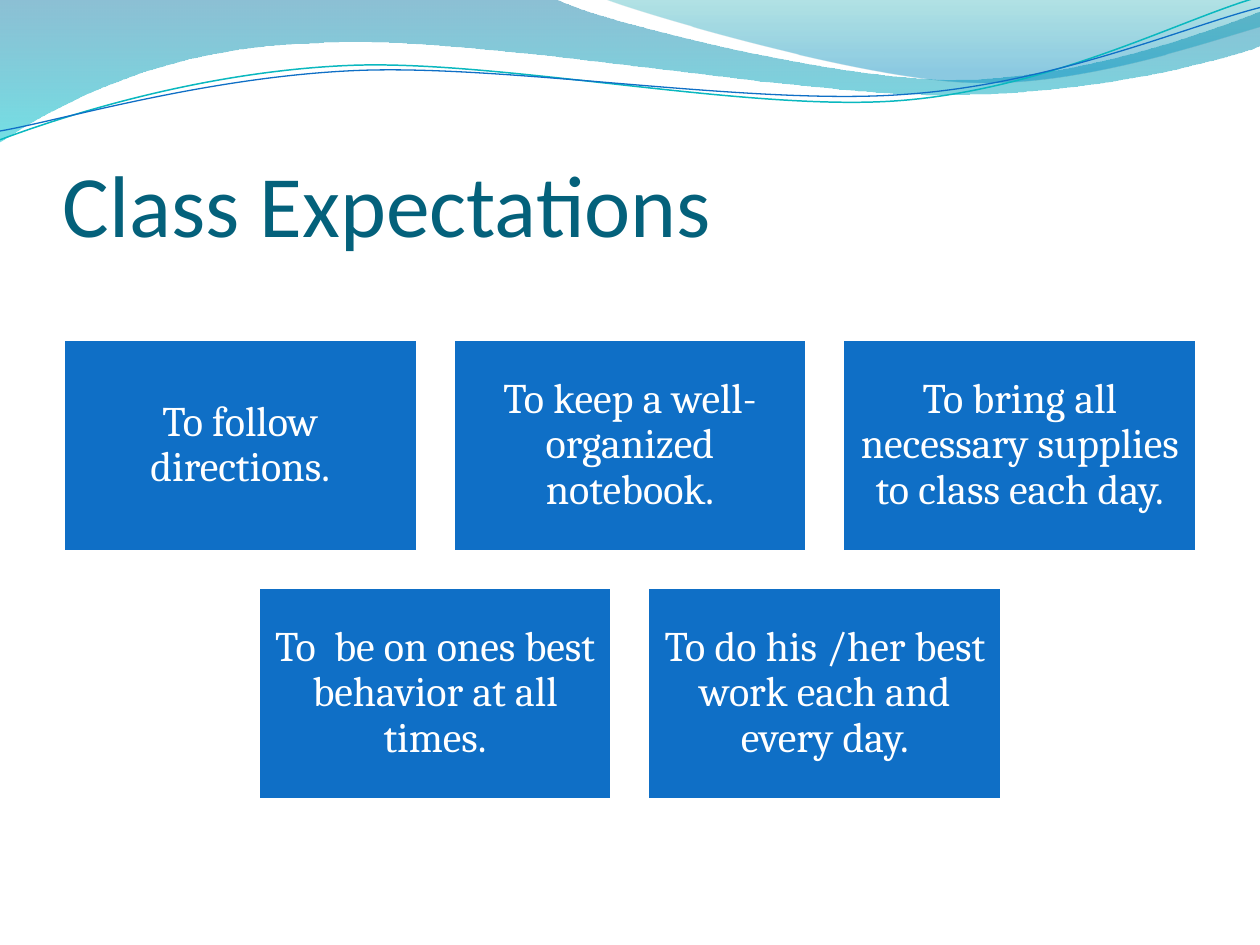
"""Builds the Class Expectations slide: a wave banner, a title and five cards."""
import pptx
import pptx.util
import pptx.dml.color
import pptx.enum.shapes
import pptx.enum.text
import pptx.oxml
import pptx.oxml.ns

RGB = pptx.dml.color.RGBColor
Inches, Pt = pptx.util.Inches, pptx.util.Pt
qn, NS = pptx.oxml.ns.qn, pptx.oxml.ns.nsdecls("a")
WHITE, BLUE, TEAL = RGB(255, 255, 255), RGB(0x0F, 0x6F, 0xC6), RGB(0x0A, 0xB8, 0xBF)
TITLE_COLOR = RGB(0x04, 0x61, 0x7B)
DEEP, AQUA = RGB(0x00, 0x74, 0xA1), RGB(0x00, 0xC6, 0xCF)
SEA, SKY = RGB(0x00, 0xA1, 0xA9), RGB(0x00, 0x8B, 0xBF)

TITLE = "Class Expectations"
CARD_ROWS = [
    ["To follow directions.",
     "To keep a well-organized notebook.",
     "To bring all necessary supplies to class each day."],
    ["To  be on ones best behavior at all times.",
     "To do his /her best work each and every day."],
]

# Each wave is a start point, then segments of one point (line) or three (Bezier curve).
BANDS = [
    ([[(0, 0)], [(4.4, -0.01)],
      [(4.76, 0.17), (6.64, 0.63), (7.58, 0.63)],
      [(8.53, 0.63), (9.58, 0.26), (10, 0.09)], [(10.01, 0.36)],
      [(9.83, 0.44), (8.7, 0.76), (7.46, 0.75)],
      [(6.22, 0.75), (3.82, 0.28), (2.57, 0.34)],
      [(1.29, 0.36), (0.46, 0.83), (-0.01, 1.13)]],
     [(0, DEEP, 45), (1, AQUA, 55)]),
    ([[(4.79, -0.01)],
      [(5.09, 0.11), (6.82, 0.62), (7.69, 0.65)],
      [(8.56, 0.69), (9.61, 0.32), (10, 0.21)], [(10, 0)]],
     [(0, SEA, 30), (0.8, SKY, 45)]),
]
STRANDS = [
    ([[(0, 1.11)],
      [(0.48, 0.93), (1.58, 0.57), (2.77, 0.52)],
      [(3.95, 0.47), (5.93, 0.89), (7.13, 0.8)],
      [(8.33, 0.71), (9.38, 0.15), (9.98, -0.02)]], TEAL, 0.85),
    ([[(0, 1.04)],
      [(0.47, 0.96), (1.64, 0.61), (2.83, 0.56)],
      [(4.03, 0.51), (5.97, 0.84), (7.17, 0.75)],
      [(8.36, 0.67), (9.41, 0.21), (10, 0.06)]], BLUE, 0.75),
]


def add_wave(shapes, segments, close):
    start, *rest = [(Inches(x), Inches(y)) for seg in segments for x, y in seg]
    builder = shapes.build_freeform(*start)
    builder.add_line_segments(rest, close=close)
    sp = builder.convert_to_shape()
    sp.shadow.inherit = False
    lines = iter(list(sp._element.iter(qn("a:lnTo"))))
    for seg in segments[1:]:
        first, *others = [next(lines) for _ in seg]
        if others:
            curve = pptx.oxml.parse_xml(f"<a:cubicBezTo {NS}/>")
            first.addprevious(curve)
            for line in (first, *others):
                curve.append(line[0])
                line.getparent().remove(line)
    return sp


def add_band(shapes, segments, stops):
    sp = add_wave(shapes, segments, True)
    sp.line.fill.background()
    sp.fill.gradient()
    sp.fill.gradient_angle = 270
    for stop, (position, color, _) in zip(sp.fill.gradient_stops, stops):
        stop.position = position
        stop.color.rgb = color
    for clr, (_, _, opacity) in zip(sp._element.spPr.iter(qn("a:srgbClr")), stops):
        clr.append(pptx.oxml.parse_xml(f'<a:alpha {NS} val="{opacity * 1000}"/>'))


def add_strand(shapes, segments, color, width):
    sp = add_wave(shapes, segments, False)
    sp.fill.background()
    sp.line.color.rgb = color
    sp.line.width = Pt(width)


def write(sp, text, font, size, color, anchor, margins):
    tf = sp.text_frame
    tf.word_wrap = True
    tf.vertical_anchor = anchor
    tf.margin_left, tf.margin_top, tf.margin_right, tf.margin_bottom = map(Inches, margins)
    p = tf.paragraphs[0]
    p.text = text
    p.font.name, p.font.size, p.font.color.rgb = font, Pt(size), color
    return p


def add_card(shapes, text, left, top, width, height):
    sp = shapes.add_shape(pptx.enum.shapes.MSO_SHAPE.RECTANGLE,
                          *map(Inches, (left, top, width, height)))
    sp.shadow.inherit = False
    sp.fill.solid()
    sp.fill.fore_color.rgb = BLUE
    sp.line.color.rgb = WHITE
    sp.line.width = Pt(2)
    p = write(sp, text, "Cambria", 24, WHITE, pptx.enum.text.MSO_ANCHOR.MIDDLE, [0.1] * 4)
    p.alignment = pptx.enum.text.PP_ALIGN.CENTER
    p.line_spacing = 0.9


def main():
    prs = pptx.Presentation()
    prs.slide_width, prs.slide_height = Inches(10), Inches(7.5)
    shapes = prs.slides.add_slide(prs.slide_layouts[6]).shapes
    for band in BANDS:
        add_band(shapes, *band)
    for strand in STRANDS:
        add_strand(shapes, *strand)

    margin, content = 0.5, 9
    box = shapes.add_textbox(*map(Inches, (margin, 0.77, content, 1.25)))
    write(box, TITLE, "Calibri", 50, TITLE_COLOR,
          pptx.enum.text.MSO_ANCHOR.BOTTOM, (0, 0.05, 0, 0))

    width = content / 3.2
    gap, height = width * 0.1, width * 0.6
    for r, row in enumerate(CARD_ROWS):
        row_width = len(row) * (width + gap) - gap
        left = margin + (content - row_width) / 2
        for c, text in enumerate(row):
            add_card(shapes, text, left + c * (width + gap),
                     2.69 + r * (height + gap), width, height)
    prs.save("out.pptx")


if __name__ == "__main__":
    main()
